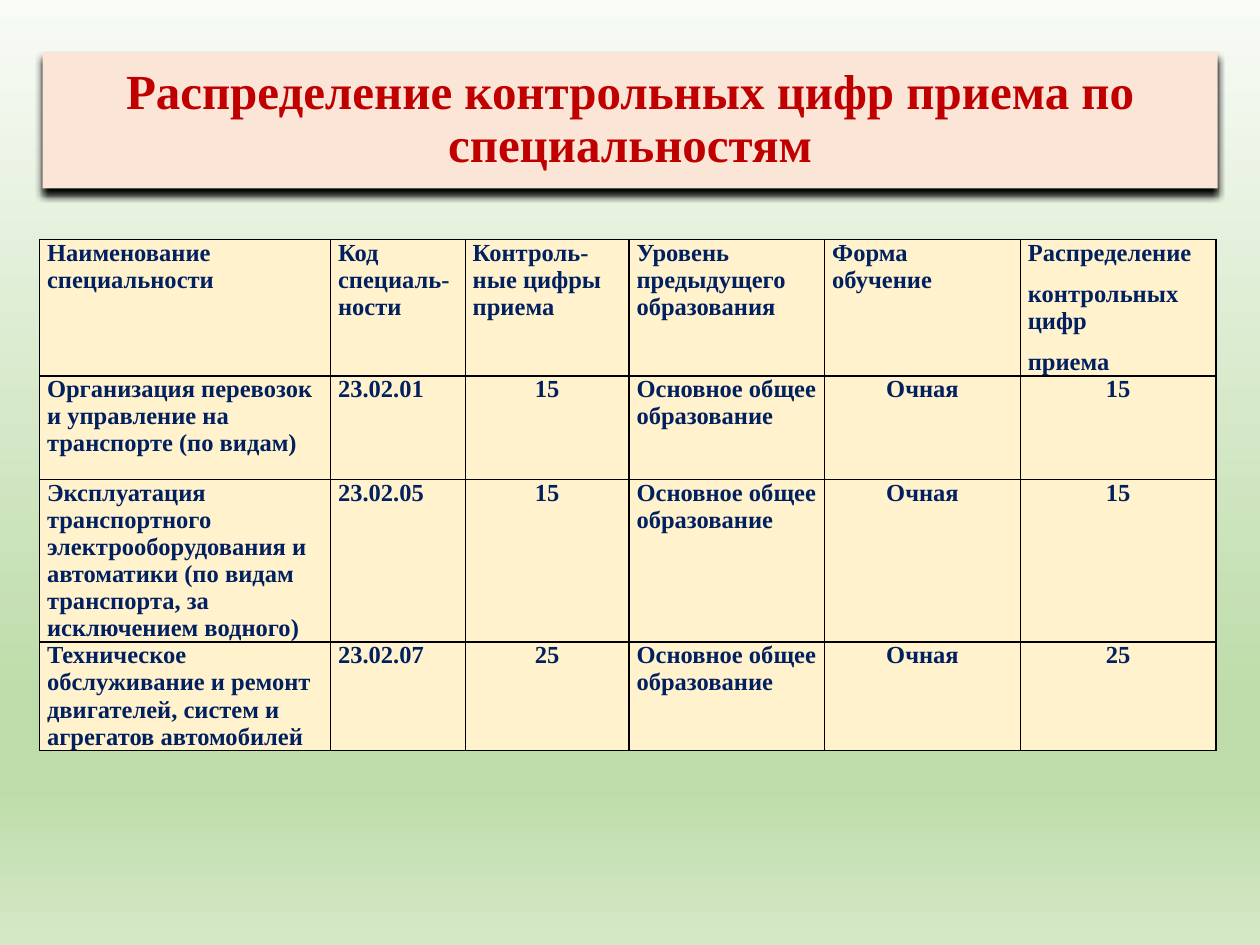
import lxml.etree
import pptx
import pptx.dml.color
import pptx.enum.text
import pptx.oxml.ns
import pptx.util

FONT = "Times New Roman"
COLUMN_WIDTHS = [166.3, 77, 93.6, 111.8, 111.8, 111.8]
ROW_HEIGHTS = [77.7, 59.2, 93, 62]
CENTERED_COLUMNS = {2, 4, 5}
HEADERS = [
    "Наименование специальности",
    "Код специаль-ности",
    "Контроль-ные цифры приема",
    "Уровень предыдущего образования",
    "Форма обучение",
    "Распределение\nконтрольных цифр\nприема",
]
SPECIALTIES = [
    ("Организация перевозок и управление на транспорте (по видам)", "23.02.01", "15"),
    (
        "Эксплуатация транспортного электрооборудования и автоматики "
        "(по видам транспорта, за исключением водного)",
        "23.02.05",
        "15",
    ),
    (
        "Техническое обслуживание и ремонт двигателей, систем и агрегатов автомобилей",
        "23.02.07",
        "25",
    ),
]


def color(value):
    return pptx.dml.color.RGBColor.from_string(value)


def add_element(parent, tag, **attributes):
    values = {name: str(value) for name, value in attributes.items()}
    return lxml.etree.SubElement(parent, pptx.oxml.ns.qn(tag), values)


def fill_solid(item, value):
    item.fill.solid()
    item.fill.fore_color.rgb = color(value)


def format_runs(paragraph, size, value):
    for run in paragraph.runs:
        run.font.name = FONT
        run.font.size = pptx.util.Pt(size)
        run.font.bold = True
        run.font.color.rgb = color(value)


def set_background(slide, stops):
    fill = slide.background.fill
    fill.gradient()
    fill.gradient_angle = 270
    stop_list = next(slide.element.iter(pptx.oxml.ns.qn("a:gsLst")))
    for stop in list(stop_list):
        stop_list.remove(stop)
    for position, value in stops:
        stop = add_element(stop_list, "a:gs", pos=position * 1000)
        add_element(stop, "a:srgbClr", val=value)


def add_shadow(shape):
    shape.shadow.inherit = False
    effects = shape.element.spPr.find(pptx.oxml.ns.qn("a:effectLst"))
    distance = pptx.util.Pt(4)
    shadow = add_element(
        effects, "a:outerShdw", blurRad=distance, dist=distance, dir=5400000, rotWithShape=0
    )
    shade = add_element(shadow, "a:srgbClr", val="000000")
    add_element(shade, "a:alpha", val=99000)


def format_title(title):
    title.left, title.top = pptx.util.Pt(24.3), pptx.util.Pt(29.5)
    title.width, title.height = pptx.util.Pt(671.5), pptx.util.Pt(78.2)
    fill_solid(title, "FBE5D6")
    add_shadow(title)
    title.text_frame.text = "Распределение контрольных цифр приема по специальностям"
    title.text_frame.vertical_anchor = pptx.enum.text.MSO_ANCHOR.MIDDLE
    paragraph = title.text_frame.paragraphs[0]
    paragraph.alignment = pptx.enum.text.PP_ALIGN.CENTER
    paragraph.line_spacing = 0.9
    format_runs(paragraph, 28, "C00000")


def add_borders(cell):
    properties = cell._tc.get_or_add_tcPr()
    for side in ("L", "R", "T", "B"):
        line = add_element(properties, f"a:ln{side}", w=pptx.util.Pt(1))
        fill = add_element(line, "a:solidFill")
        add_element(fill, "a:srgbClr", val="000000")


def format_cell(cell, text, centered):
    add_borders(cell)
    fill_solid(cell, "FFF2CC")
    cell.margin_left = cell.margin_right = pptx.util.Pt(4.3)
    cell.margin_top = cell.margin_bottom = 0
    cell.text_frame.text = text
    for paragraph in cell.text_frame.paragraphs:
        paragraph.space_after = pptx.util.Pt(8)
        if centered:
            paragraph.alignment = pptx.enum.text.PP_ALIGN.CENTER
        format_runs(paragraph, 14, "002060")


def add_admission_table(slide):
    rows = [HEADERS] + [
        [name, code, quota, "Основное общее образование", "Очная", quota]
        for name, code, quota in SPECIALTIES
    ]
    table = slide.shapes.add_table(
        len(rows),
        len(HEADERS),
        pptx.util.Pt(22.6),
        pptx.util.Pt(136.8),
        pptx.util.Pt(sum(COLUMN_WIDTHS)),
        pptx.util.Pt(sum(ROW_HEIGHTS)),
    ).table
    for column, width in zip(table.columns, COLUMN_WIDTHS):
        column.width = pptx.util.Pt(width)
    for row, height in zip(table.rows, ROW_HEIGHTS):
        row.height = pptx.util.Pt(height)
    for row_index, texts in enumerate(rows):
        for column_index, text in enumerate(texts):
            centered = row_index > 0 and column_index in CENTERED_COLUMNS
            format_cell(table.cell(row_index, column_index), text, centered)


def main():
    presentation = pptx.Presentation()
    presentation.slide_width = pptx.util.Pt(720)
    presentation.slide_height = pptx.util.Pt(540)
    slide = presentation.slides.add_slide(presentation.slide_layouts[5])
    set_background(slide, [(0, "F8FBF6"), (74, "BEDCAA"), (83, "BEDCAA"), (100, "D4E8C6")])
    format_title(slide.shapes.title)
    add_admission_table(slide)
    presentation.save("out.pptx")


if __name__ == "__main__":
    main()
